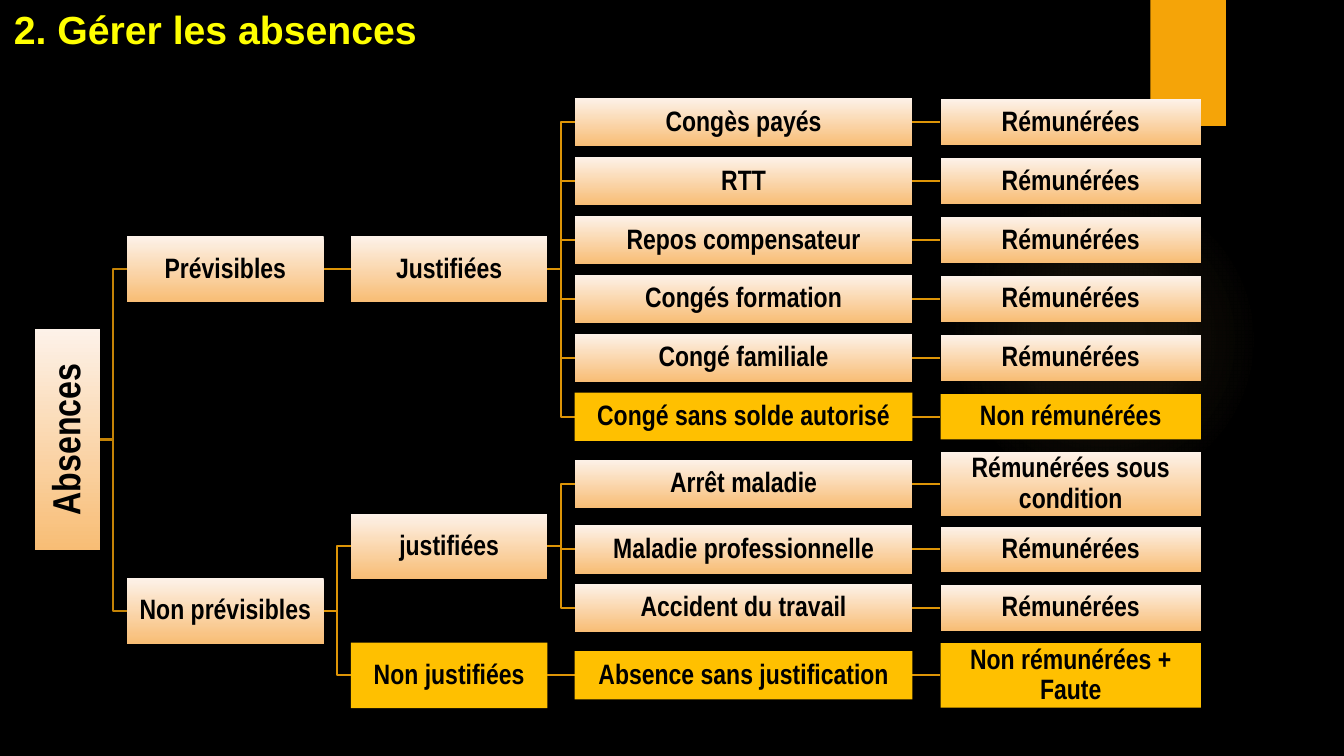
from lxml import etree
from pptx import Presentation
from pptx.dml.color import RGBColor
from pptx.enum.shapes import MSO_CONNECTOR as Connector, MSO_SHAPE as Shape
from pptx.enum.text import MSO_ANCHOR as Anchor, PP_ALIGN as Align
from pptx.oxml.ns import qn
from pptx.util import Inches, Pt

BLACK = RGBColor(0x00, 0x00, 0x00)
YELLOW = RGBColor(0xFF, 0xFF, 0x00)
ORANGE = RGBColor(0xF5, 0xA4, 0x08)
GLOW = RGBColor(0xFA, 0xC9, 0x6A)
CREAM = RGBColor(0xFD, 0xF2, 0xE9)
PEACH = RGBColor(0xF8, 0xBD, 0x75)
AMBER = RGBColor(0xFF, 0xC0, 0x00)
ROOT_LINE = RGBColor(0xC4, 0x83, 0x06)
BRANCH_LINE = RGBColor(0xDE, 0x95, 0x07)

GAP = 0.27
KIND_LEFT, STATUS_LEFT, BOX_WIDTH, BOX_HEIGHT = 1.26, 3.48, 1.95, 0.65
REASON_LEFT, REASON_WIDTH, REASON_HEIGHT = 5.7, 3.35, 0.48
PAY_LEFT, PAY_WIDTH = 9.33, 2.58
ROOT_RIGHT, ROOT_Y = 0.99, 4.36
PLANNED_Y, UNPLANNED_Y, EXCUSED_Y, UNEXCUSED_Y = 2.67, 6.06, 5.42, 6.7

presentation = Presentation()
presentation.slide_width = Inches(13.33)
presentation.slide_height = Inches(7.5)
slide = presentation.slides.add_slide(presentation.slide_layouts[6])
slide.background.fill.solid()
slide.background.fill.fore_color.rgb = BLACK


def add_box(text, left, middle, width, height, size=20, inset=0.01, rotation=0, highlighted=False):
    box = slide.shapes.add_shape(
        Shape.RECTANGLE, Inches(left), Inches(middle - height / 2), Inches(width), Inches(height))
    box.shadow.inherit = False
    box.rotation = rotation
    box.line.fill.background()
    if highlighted:
        box.fill.solid()
        box.fill.fore_color.rgb = AMBER
    else:
        box.fill.gradient()
        box.fill.gradient_angle = 270
        for stop, color in zip(box.fill.gradient_stops, (CREAM, PEACH)):
            stop.color.rgb = color
        box._element.spPr.find(qn("a:gradFill")).set("rotWithShape", "0")
    frame = box.text_frame
    frame.word_wrap = True
    frame.vertical_anchor = Anchor.MIDDLE
    frame.margin_left = frame.margin_right = Inches(inset)
    frame.margin_top = frame.margin_bottom = Inches(inset)
    paragraph = frame.paragraphs[0]
    paragraph.text = text
    paragraph.alignment = Align.CENTER
    paragraph.line_spacing = 0.9
    paragraph.font.name = "Arial Narrow"
    paragraph.font.size = Pt(size)
    paragraph.font.bold = True
    paragraph.font.color.rgb = BLACK


def add_link(left, start_y, end_y, color=BRANCH_LINE):
    kind = Connector.STRAIGHT if start_y == end_y else Connector.ELBOW
    link = slide.shapes.add_connector(
        kind, Inches(left), Inches(start_y), Inches(left + GAP), Inches(end_y))
    link.line.color.rgb = color
    link.line.width = Pt(1.5)
    etree.SubElement(link._element.spPr, qn("a:effectLst"))


halo = slide.shapes.add_shape(Shape.OVAL, Inches(9.41), Inches(1.83), Inches(3.08), Inches(3.08))
halo.shadow.inherit = False
halo.line.fill.background()
halo.fill.gradient()
gradient = halo._element.spPr.find(qn("a:gradFill"))
for child in list(gradient):
    gradient.remove(child)
stops = etree.SubElement(gradient, qn("a:gsLst"))
for position, opacity in ((0, 7), (36, 6), (69, 0)):
    stop = etree.SubElement(stops, qn("a:gs"), pos=str(position * 1000))
    color = etree.SubElement(stop, qn("a:srgbClr"), val=str(GLOW))
    etree.SubElement(color, qn("a:alpha"), val=str(opacity * 1000))
circle = etree.SubElement(gradient, qn("a:path"), path="circle")
etree.SubElement(circle, qn("a:fillToRect"), l="50000", t="50000", r="50000", b="50000")

tab = slide.shapes.add_shape(Shape.RECTANGLE, Inches(11.41), 0, Inches(0.75), Inches(1.25))
tab.shadow.inherit = False
tab.line.fill.background()
tab.fill.solid()
tab.fill.fore_color.rgb = ORANGE

title = slide.shapes.add_textbox(Inches(0.04), 0, Inches(11.23), Inches(0.57))
title.text_frame.word_wrap = True
title.text_frame.vertical_anchor = Anchor.BOTTOM
heading = title.text_frame.paragraphs[0]
heading.text = "2. Gérer les absences"
heading.font.name = "Arial"
heading.font.size = Pt(28)
heading.font.bold = True
heading.font.color.rgb = YELLOW

branches = [
    ("Prévisibles", PLANNED_Y, [("Justifiées", PLANNED_Y, False)]),
    ("Non prévisibles", UNPLANNED_Y, [
        ("justifiées", EXCUSED_Y, False),
        ("Non justifiées", UNEXCUSED_Y, True),
    ]),
]
planned = [
    ("Congès payés", "Rémunérées", False),
    ("RTT", "Rémunérées", False),
    ("Repos compensateur", "Rémunérées", False),
    ("Congés formation", "Rémunérées", False),
    ("Congé familiale", "Rémunérées", False),
    ("Congé sans solde autorisé", "Non rémunérées", True),
]
reasons = [(PLANNED_Y, 1.21 + 0.585 * row, 0.45, *entry) for row, entry in enumerate(planned)]
reasons += [
    (EXCUSED_Y, 4.8, 0.64, "Arrêt maladie", "Rémunérées sous condition", False),
    (EXCUSED_Y, 5.45, 0.45, "Maladie professionnelle", "Rémunérées", False),
    (EXCUSED_Y, 6.03, 0.45, "Accident du travail", "Rémunérées", False),
    (UNEXCUSED_Y, 6.7, 0.64, "Absence sans justification", "Non rémunérées + Faute", True),
]

add_box("Absences", -0.43, ROOT_Y, 2.2, 0.64, size=28, inset=0.02, rotation=270)
for kind, kind_y, statuses in branches:
    add_link(ROOT_RIGHT, ROOT_Y, kind_y, color=ROOT_LINE)
    add_box(kind, KIND_LEFT, kind_y, BOX_WIDTH, BOX_HEIGHT)
    for status, status_y, highlighted in statuses:
        add_link(KIND_LEFT + BOX_WIDTH, kind_y, status_y)
        add_box(status, STATUS_LEFT, status_y, BOX_WIDTH, BOX_HEIGHT, highlighted=highlighted)
for status_y, middle, pay_height, reason, pay, highlighted in reasons:
    add_link(STATUS_LEFT + BOX_WIDTH, status_y, middle)
    add_link(REASON_LEFT + REASON_WIDTH, middle, middle)
    add_box(reason, REASON_LEFT, middle, REASON_WIDTH, REASON_HEIGHT, highlighted=highlighted)
    add_box(pay, PAY_LEFT, middle, PAY_WIDTH, pay_height, highlighted=highlighted)

presentation.save("out.pptx")
